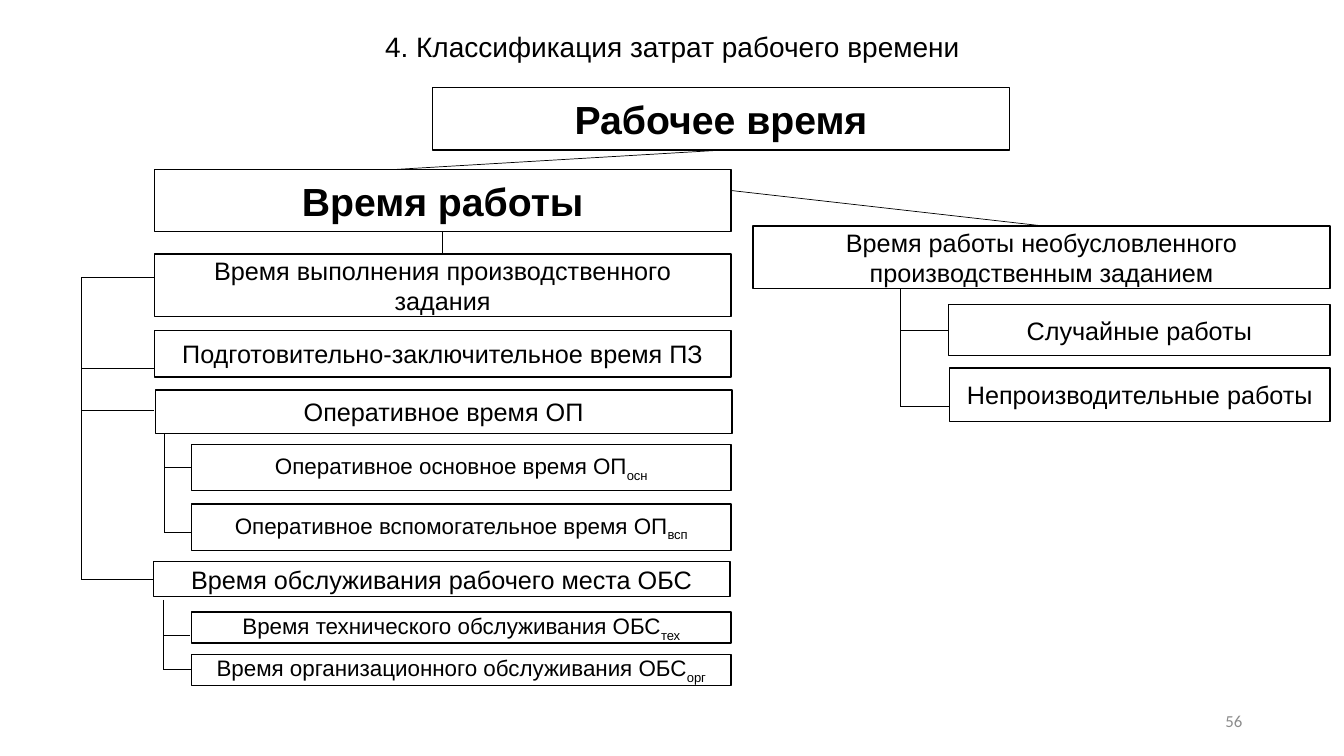
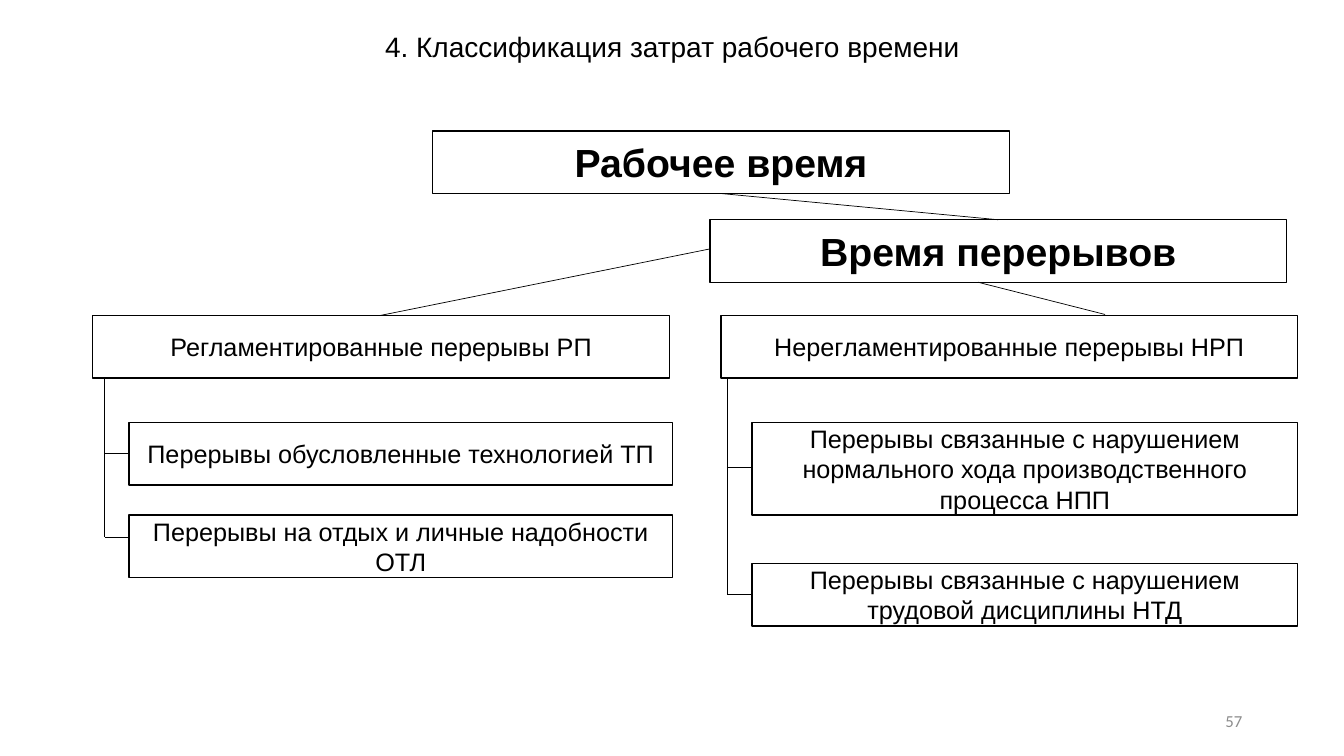
from lxml.etree import SubElement
from pptx import Presentation
from pptx.dml.color import RGBColor
from pptx.enum.shapes import MSO_CONNECTOR, MSO_SHAPE
from pptx.enum.text import MSO_ANCHOR, PP_ALIGN
from pptx.oxml.ns import qn
from pptx.util import Pt

PX = 9144  # 100 px to the inch
COLORS = {"ink": "000000", "paper": "FFFFFF", "muted": "8C8C8C"}
TITLE = "4. Классификация затрат рабочего времени"

# Text styles: font format, colour, alignment
STYLES = {
    "title": ({"name": "Arial", "size": Pt(20)}, "ink", PP_ALIGN.CENTER),
    "number": ({"name": "Calibri", "size": Pt(12)}, "muted", PP_ALIGN.RIGHT),
    "head": ({"name": "Arial", "size": Pt(28), "bold": True}, "ink", PP_ALIGN.CENTER),
    "item": ({"name": "Arial", "size": Pt(18)}, "ink", PP_ALIGN.CENTER),
    "sub": ({"name": "Arial", "size": Pt(16)}, "ink", PP_ALIGN.CENTER),
}

# Boxes: style, left, top, width, height, text, subscript
# Links: x1, y1, x2, y2
# Brackets: trunk x, trunk top, branches as (y, right end)
W, H = 572, 62
SLIDES = [
    {
        "number": "56",
        "boxes": [
            ("head", 429, 87, W, H, "Рабочее время", ""),
            ("head", 153, 168, W, H, "Время работы", ""),
            ("item", 153, 252, W, H, "Время выполнения производственного задания", ""),
            ("item", 153, 328, W, 46, "Подготовительно-заключительное время ПЗ", ""),
            ("item", 154, 387, W, 43, "Оперативное время ОП", ""),
            ("sub", 190, 441, 535, 46, "Оперативное основное время ОП", "осн"),
            ("sub", 190, 500, 535, 46, "Оперативное вспомогательное время ОП", "всп"),
            ("item", 152, 557, W, 35, "Время обслуживания рабочего места ОБС", ""),
            ("sub", 190, 607, 535, 31, "Время технического обслуживания ОБС", "тех"),
            ("sub", 190, 649, 535, 31, "Время организационного обслуживания ОБС", "орг"),
            ("item", 747, 224, W, H,
             "Время работы необусловленного производственным заданием", ""),
            ("item", 941, 302, 378, 51, "Случайные работы", ""),
            ("item", 942, 365, 377, 53, "Непроизводительные работы", ""),
        ],
        "links": [(715, 149, 394, 168), (439, 230, 439, 252), (725, 189, 1033, 224)],
        "brackets": [
            (81, 275, [(275, 153), (365, 153), (407, 153), (575, 152)]),
            (163, 430, [(464, 190), (528, 190)]),
            (162, 595, [(630, 188), (664, 190)]),
            (893, 286, [(328, 941), (403, 942)]),
        ],
    },
    {
        "number": "57",
        "boxes": [
            ("head", 429, 130, W, H, "Рабочее время", ""),
            ("head", 704, 218, W, H, "Время перерывов", ""),
            ("item", 92, 313, W, H, "Регламентированные перерывы РП", ""),
            ("item", 128, 419, 539, H, "Перерывы обусловленные технологией ТП", ""),
            ("item", 128, 511, 539, H, "Перерывы на отдых и личные надобности ОТЛ", ""),
            ("item", 715, 313, W, H, "Нерегламентированные перерывы НРП", ""),
            ("item", 746, 419, 541, 92,
             "Перерывы связанные с нарушением нормального хода "
             "производственного процесса НПП", ""),
            ("item", 746, 559, 541, H,
             "Перерывы связанные с нарушением трудовой дисциплины НТД", ""),
        ],
        "links": [(715, 192, 990, 218), (704, 247, 377, 313), (970, 280, 1096, 312)],
        "brackets": [
            (104, 375, [(450, 128), (533, 128)]),
            (721, 375, [(464, 746), (590, 746)]),
        ],
    },
]


def add_text(s, style, x, y, w, h, text, subscript="", framed=True):
    box = [v * PX for v in (x, y, w, h)]
    if framed:
        sp = s.shapes.add_shape(MSO_SHAPE.RECTANGLE, *box)
        sp.shadow.inherit = False
        sp.fill.solid()
        sp.fill.fore_color.rgb = RGBColor.from_string(COLORS["paper"])
        sp.line.color.rgb = RGBColor.from_string(COLORS["ink"])
        sp.line.width = Pt(1)
    else:
        sp = s.shapes.add_textbox(*box)
    font, color, align = STYLES[style]
    tf = sp.text_frame
    tf.word_wrap = True
    tf.vertical_anchor = MSO_ANCHOR.MIDDLE
    p = tf.paragraphs[0]
    p.alignment = align
    for part, baseline in ((text, 0), (subscript, -25000)):
        if not part:
            continue
        r = p.add_run()
        r.text = part
        for key, value in font.items():
            setattr(r.font, key, value)
        r.font.color.rgb = RGBColor.from_string(COLORS[color])
        if baseline:
            r._r.get_or_add_rPr().set("baseline", str(baseline))
    return p


def add_line(s, *ends):
    c = s.shapes.add_connector(MSO_CONNECTOR.STRAIGHT, *[v * PX for v in ends])
    c.line.color.rgb = RGBColor.from_string(COLORS["ink"])
    c.line.width = Pt(0.5)
    SubElement(c._element.spPr, qn("a:effectLst"))


prs = Presentation()
prs.slide_width, prs.slide_height = 1333 * PX, 750 * PX

for content in SLIDES:
    s = prs.slides.add_slide(prs.slide_layouts[6])

    # Title and slide number
    p = add_text(s, "title", 92, 21, 1150, 55, TITLE, framed=False)
    p.line_spacing = 0.9
    add_text(s, "number", 942, 695, 300, 40, content["number"], framed=False)

    # Boxes
    for box in content["boxes"]:
        add_text(s, *box)

    # Links between levels
    for link in content["links"]:
        add_line(s, *link)

    # Brackets: one trunk down to the last branch
    for x, top, branches in content["brackets"]:
        add_line(s, x, top, x, branches[-1][0])
        for y, right in branches:
            add_line(s, x, y, right, y)

prs.save("out.pptx")
